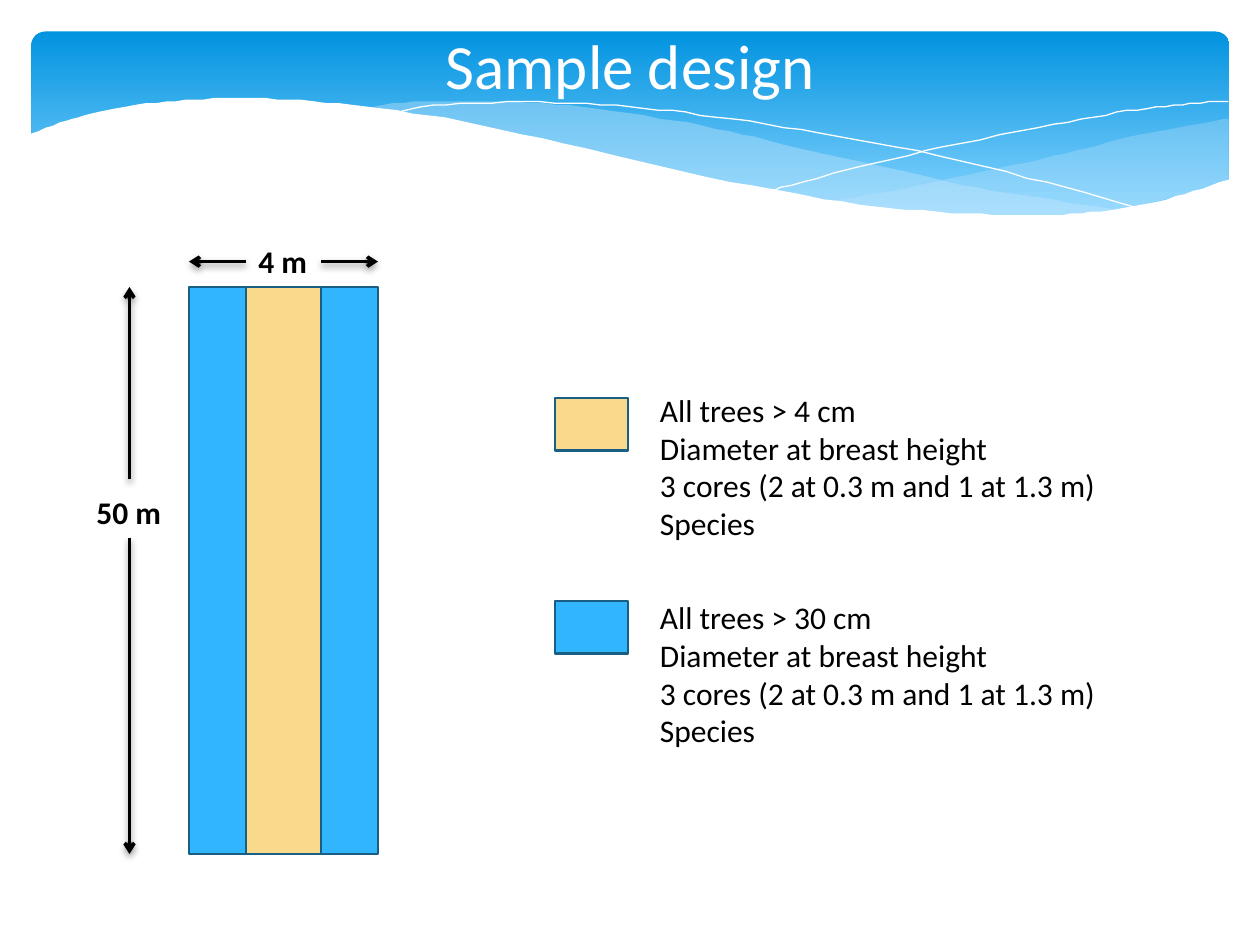
import lxml.etree
import pptx
import pptx.dml.color
import pptx.enum.shapes
import pptx.enum.text
import pptx.oxml
import pptx.oxml.ns
import pptx.util

Pt = pptx.util.Pt
RGBColor = pptx.dml.color.RGBColor
qn = pptx.oxml.ns.qn
SHAPES = pptx.enum.shapes.MSO_SHAPE

WHITE = RGBColor(0xFF, 0xFF, 0xFF)
BLACK = RGBColor(0x00, 0x00, 0x00)
BANNER_TOP = RGBColor(0x02, 0x93, 0xE0)
BANNER_BOTTOM = RGBColor(0x83, 0xD3, 0xFE)
PALE_BLUE = RGBColor(0xC6, 0xE7, 0xFC)
BLUE = RGBColor(0x31, 0xB6, 0xFD)
SAND = RGBColor(0xF9, 0xD9, 0x8C)
OUTLINE = RGBColor(0x19, 0x5F, 0x84)
FONT = "Calibri"

# Knots of the banner curves, in points
RIGHT_WAVE_TOP = [(702.5, 67.5), (673, 72.7), (641.5, 79.2), (620, 85),
                  (579.5, 94.3), (525, 106), (476, 115.2)]
RIGHT_WAVE_BOTTOM = [(476, 115.2), (507.5, 118.8), (545, 122.4), (586, 123.8),
                     (621.5, 122.4), (651.5, 117.4), (678, 111), (702.5, 101.5)]
LONG_WAVE_TOP = [(643, 120.2), (602.5, 114.5), (558, 107.3), (508.5, 96.5),
                 (453, 83.5), (409.5, 73.5), (361.5, 65), (318, 59.8),
                 (273.5, 57.6), (236, 58.3), (206, 62)]
LONG_WAVE_BOTTOM = [(206, 62), (246, 67.7), (291, 76.3), (323.5, 83.5),
                    (381.5, 97.2), (432.5, 108), (479, 116), (520, 121),
                    (565, 123.8), (603.5, 123.8), (643, 120.2)]
FALLING_LINE = [(222.5, 64.8), (247.5, 60.5), (299.5, 58.3), (352, 60.5),
                (400.5, 65.5), (458, 74.2), (523.5, 86.4), (598.5, 104.4),
                (653, 119.5)]
RISING_LINE = [(441.5, 108.7), (484, 97.2), (538.5, 84.2), (602, 71.3),
               (644.5, 63.4), (675.5, 59.8), (702, 57.6)]
WHITE_EDGE = [(703.5, 101.5), (677, 111), (647, 118), (612, 122.4),
              (582.5, 123.1), (535.5, 121), (481, 115.2), (417, 103.7),
              (322, 82), (263, 69), (210, 61.2), (165.5, 57), (127.5, 56.2),
              (95, 58.3), (61, 62.6), (37.5, 69), (16.5, 77)]
WHITE_CORNERS = [(16.5, 161), (703.5, 161)]


def smooth_curve(knots, steps=6):
    """Return points on a Catmull-Rom curve through the knots."""
    padded = [knots[0], *knots, knots[-1]]
    points = []
    for a, b, c, d in zip(padded, padded[1:], padded[2:], padded[3:]):
        for step in range(steps):
            t = step / steps
            points.append(tuple(
                (2 * q + (r - p) * t + (2 * p - 5 * q + 4 * r - s) * t ** 2
                 + (3 * q - p - 3 * r + s) * t ** 3) / 2
                for p, q, r, s in zip(a, b, c, d)))
    return points + [knots[-1]]


def add_outline(page, points, closed):
    builder = page.shapes.build_freeform(*points[0], scale=Pt(1))
    builder.add_line_segments(points[1:], close=closed)
    outline = builder.convert_to_shape()
    outline.shadow.inherit = False
    return outline


def add_wave(page, points, color, opacity=100):
    wave = add_outline(page, points, True)
    wave.fill.solid()
    wave.fill.fore_color.rgb = color
    wave.line.fill.background()
    if opacity < 100:
        rgb = wave.fill._xPr.find(qn("a:solidFill"))[0]
        alpha = lxml.etree.SubElement(rgb, qn("a:alpha"))
        alpha.set("val", str(opacity * 1000))


def add_hairline(page, knots):
    curve = add_outline(page, smooth_curve(knots), False)
    curve.fill.background()
    curve.line.color.rgb = WHITE
    curve.line.width = Pt(0)


def add_banner(page):
    banner = page.shapes.add_shape(SHAPES.ROUNDED_RECTANGLE,
                                   Pt(18), Pt(18), Pt(684.5), Pt(112.5))
    banner.adjustments[0] = 0.07
    banner.shadow.inherit = False
    banner.line.fill.background()
    banner.fill.gradient()
    banner.fill.gradient_angle = 270
    stops = ((0, BANNER_TOP), (0.9, BANNER_BOTTOM))
    for stop, (position, color) in zip(banner.fill.gradient_stops, stops):
        stop.position = position
        stop.color.rgb = color

    for top, bottom, opacity in ((RIGHT_WAVE_TOP, RIGHT_WAVE_BOTTOM, 29),
                                 (LONG_WAVE_TOP, LONG_WAVE_BOTTOM, 40)):
        add_wave(page, smooth_curve(top) + smooth_curve(bottom)[1:],
                 PALE_BLUE, opacity)
    add_hairline(page, FALLING_LINE)
    add_hairline(page, RISING_LINE)
    add_wave(page, smooth_curve(WHITE_EDGE) + WHITE_CORNERS, WHITE)


def add_block(page, left, top, width, height, color):
    block = page.shapes.add_shape(SHAPES.RECTANGLE,
                                  Pt(left), Pt(top), Pt(width), Pt(height))
    block.shadow.inherit = False
    block.fill.solid()
    block.fill.fore_color.rgb = color
    block.line.color.rgb = OUTLINE
    block.line.width = Pt(1.25)


def add_span(para, text, size, color, bold=False):
    span = para.add_run()
    span.text = text
    span.font.name = FONT
    span.font.size = Pt(size)
    span.font.bold = bold
    span.font.color.rgb = color


def add_label(page, left, top, width, height, lines, bold=False):
    box = page.shapes.add_textbox(Pt(left), Pt(top), Pt(width), Pt(height))
    frame = box.text_frame
    frame.word_wrap = False
    frame.auto_size = pptx.enum.text.MSO_AUTO_SIZE.SHAPE_TO_FIT_TEXT
    for index, line in enumerate(lines):
        para = frame.add_paragraph() if index else frame.paragraphs[0]
        add_span(para, line, 18, BLACK, bold)


def add_arrow(page, start, end):
    arrow = page.shapes.add_connector(
        pptx.enum.shapes.MSO_CONNECTOR.STRAIGHT,
        Pt(start[0]), Pt(start[1]), Pt(end[0]), Pt(end[1]))
    arrow.line.color.rgb = BLACK
    arrow.line.width = Pt(2)
    head = lxml.etree.SubElement(arrow.line._get_or_add_ln(), qn("a:tailEnd"))
    head.set("type", "arrow")
    # Soft shadow straight below
    arrow._element.spPr.append(pptx.oxml.parse_xml(
        '<a:effectLst xmlns:a="http://schemas.openxmlformats.org/drawingml/2006/main">'
        f'<a:outerShdw blurRad="{Pt(4)}" dist="{Pt(2)}" dir="5400000" rotWithShape="0">'
        '<a:srgbClr val="000000"><a:alpha val="38000"/></a:srgbClr>'
        '</a:outerShdw></a:effectLst>'))


def add_title(page, text):
    title = page.shapes.title
    title.left, title.top, title.width, title.height = (
        Pt(36), Pt(11.5), Pt(648), Pt(98.6))
    title.text_frame.vertical_anchor = pptx.enum.text.MSO_ANCHOR.TOP
    para = title.text_frame.paragraphs[0]
    para.alignment = pptx.enum.text.PP_ALIGN.CENTER
    add_span(para, text, 36, WHITE)
    page.shapes._spTree.append(title._element)  # in front of the banner


def main():
    deck = pptx.Presentation()
    deck.slide_width, deck.slide_height = Pt(720), Pt(540)
    page = deck.slides.add_slide(deck.slide_layouts[5])
    add_banner(page)

    # Plot with its inner strip
    left, top, width, height = 108, 164, 108, 324
    strip_left, strip_width = 140.5, 43
    add_block(page, left, top, width, height, BLUE)
    add_block(page, strip_left, top, strip_width, height, SAND)

    # Dimensions
    add_label(page, 48, 278, 52.5, 29, ["50 m"], bold=True)
    add_label(page, 140.5, 135, 43, 29, ["4 m"], bold=True)
    add_arrow(page, (74, 274), (74, top))
    add_arrow(page, (74, 307.5), (74, top + height))
    add_arrow(page, (strip_left + strip_width, 149.5), (left + width, 149.5))
    add_arrow(page, (strip_left, 149.5), (left, 149.5))

    # Legend
    for color, limit, swatch_top, text_top in ((SAND, 4, 227.5, 219.8),
                                               (BLUE, 30, 343.5, 338.2)):
        add_block(page, 317, swatch_top, 42, 30, color)
        add_label(page, 370, text_top, 265, 94.5, [
            f"All trees > {limit} cm", "Diameter at breast height",
            "3 cores (2 at 0.3 m and 1 at 1.3 m)", "Species"])

    add_title(page, "Sample design")
    deck.save("out.pptx")


if __name__ == "__main__":
    main()
